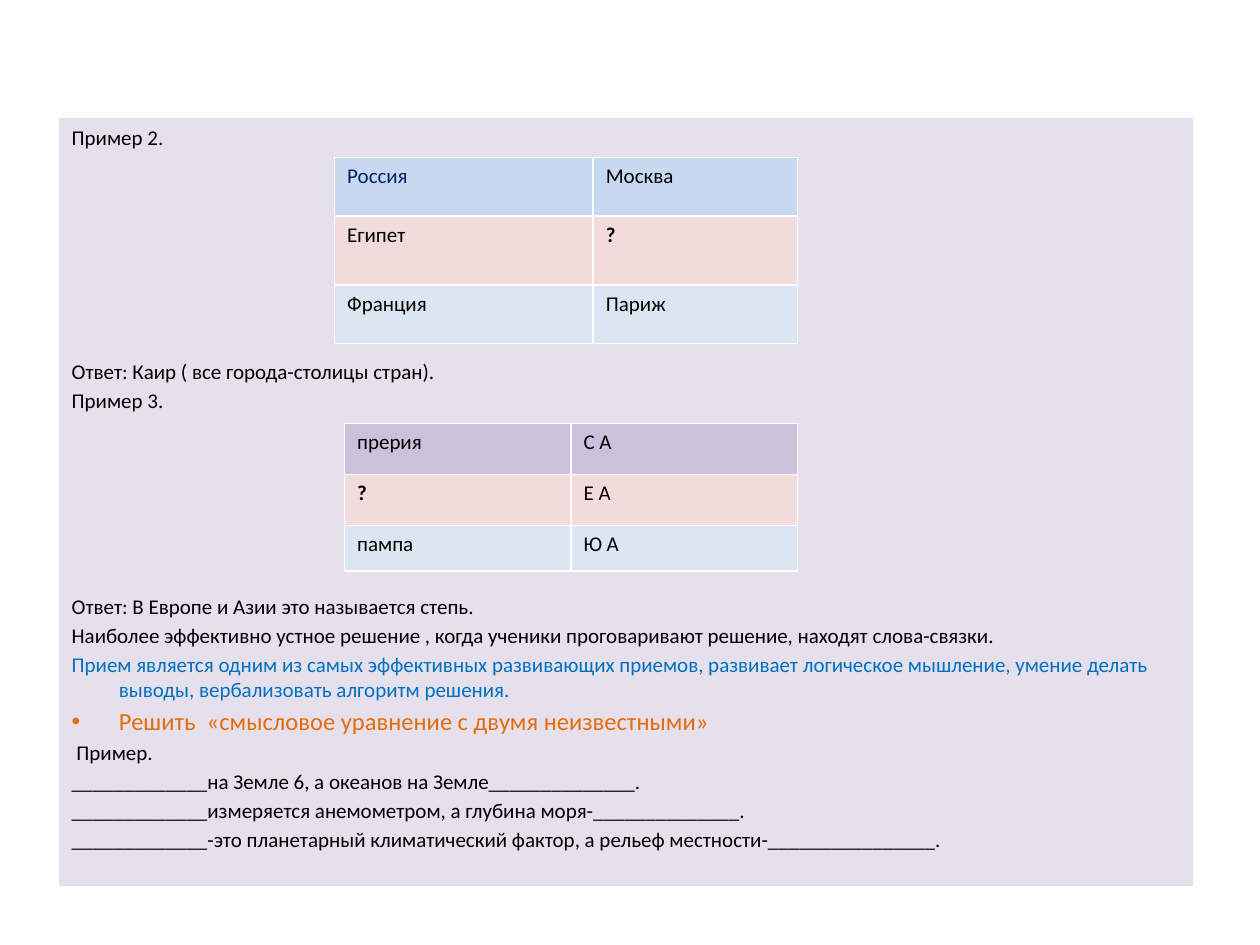
"""Builds a slide with worked examples of word analogies and two small tables."""
import pptx
import pptx.dml.color
import pptx.enum.text
import pptx.oxml.ns
import pptx.util
from lxml import etree

Pt = pptx.util.Pt
RGBColor = pptx.dml.color.RGBColor

BLACK = RGBColor(0x00, 0x00, 0x00)
NAVY = RGBColor(0x00, 0x20, 0x60)
BLUE = RGBColor(0x00, 0x70, 0xC0)
ORANGE = RGBColor(0xE4, 0x6C, 0x0A)
LAVENDER = RGBColor(0xE6, 0xE0, 0xEC)
VIOLET = RGBColor(0xCC, 0xC1, 0xDA)
SKY = RGBColor(0xC6, 0xD9, 0xF1)
ROSE = RGBColor(0xF2, 0xDC, 0xDB)
ICE = RGBColor(0xDC, 0xE6, 0xF2)

LINE_GAP = 2.2
COUNTRY_GAP = 119.6
STEPPE_GAP = 103

PARAGRAPHS = [
    ("Пример 2.", {"gap": 0}),
    ("Ответ: Каир ( все города-столицы стран).", {"gap": COUNTRY_GAP}),
    ("Пример 3.", {}),
    ("Ответ: В Европе и Азии это называется степь.", {"gap": STEPPE_GAP}),
    ("Наиболее эффективно устное решение , когда ученики проговаривают "
     "решение, находят слова-связки.", {}),
    ("Прием является одним из самых эффективных развивающих приемов, развивает "
     "логическое мышление, умение делать выводы, вербализовать алгоритм решения.",
     {"color": BLUE}),
    ("Решить  «смысловое уравнение с двумя неизвестными»",
     {"color": ORANGE, "size": 14, "bullet": True}),
    (" Пример.", {}),
    ("_____________на Земле 6, а океанов на Земле______________.", {}),
    ("_____________измеряется анемометром, а глубина моря-______________.", {}),
    ("_____________-это планетарный климатический фактор, а рельеф "
     "местности-________________.", {}),
]


class SlideBuilder:
    font_name = "Calibri"
    font_size = 12
    indent = 27

    def __init__(self, slide):
        self.slide = slide

    def style(self, paragraph, color=BLACK, size=font_size, bold=False):
        for run in paragraph.runs:
            run.font.name = self.font_name
            run.font.size = Pt(size)
            run.font.bold = bold
            run.font.color.rgb = color

    def format_paragraph(self, paragraph, gap=LINE_GAP, bullet=False, **font):
        properties = paragraph._p.get_or_add_pPr()
        properties.set("marL", str(Pt(self.indent)))
        properties.set("indent", str(-Pt(self.indent)))
        if not bullet:
            etree.SubElement(properties, pptx.oxml.ns.qn("a:buNone"))
        paragraph.space_before = Pt(gap)
        self.style(paragraph, **font)

    def body(self, left, top, width, height, paragraphs):
        shape = self.slide.placeholders[1]
        shape.left, shape.top = Pt(left), Pt(top)
        shape.width, shape.height = Pt(width), Pt(height)
        shape.fill.solid()
        shape.fill.fore_color.rgb = LAVENDER
        text_frame = shape.text_frame
        text_frame.auto_size = pptx.enum.text.MSO_AUTO_SIZE.NONE
        text_frame.text = "\n".join(text for text, _ in paragraphs)
        for paragraph, (_, options) in zip(text_frame.paragraphs, paragraphs):
            self.format_paragraph(paragraph, **options)

    def table(self, left, top, widths, heights, rows, fills, first_color=BLACK):
        table = self.slide.shapes.add_table(
            len(rows), len(widths), Pt(left), Pt(top),
            Pt(sum(widths)), Pt(sum(heights))).table
        for column, width in zip(table.columns, widths):
            column.width = Pt(width)
        for row, height, texts, fill in zip(table.rows, heights, rows, fills):
            row.height = Pt(height)
            for cell, text in zip(row.cells, texts):
                cell.fill.solid()
                cell.fill.fore_color.rgb = fill
                cell.text_frame.text = text
                self.style(cell.text_frame.paragraphs[0], bold=text == "?")
        self.style(table.cell(0, 0).text_frame.paragraphs[0], first_color)


def main():
    presentation = pptx.Presentation()
    presentation.slide_width, presentation.slide_height = Pt(720), Pt(540)
    slide = presentation.slides.add_slide(presentation.slide_layouts[1])
    title = slide.shapes.title._element
    title.getparent().remove(title)

    builder = SlideBuilder(slide)
    builder.body(33.75, 67.5, 648, 438.75, PARAGRAPHS)
    builder.table(191.2, 89.9, [147.8, 116.6], [33.5, 39.4, 33.5],
                  [("Россия", "Москва"), ("Египет", "?"), ("Франция", "Париж")],
                  [SKY, ROSE, ICE], first_color=NAVY)
    builder.table(196.9, 241.9, [129.4, 129.4], [29.2, 29.2, 26],
                  [("прерия", "С А"), ("?", "Е А"), ("пампа", "Ю А")],
                  [VIOLET, ROSE, ICE])
    presentation.save("out.pptx")


if __name__ == "__main__":
    main()
